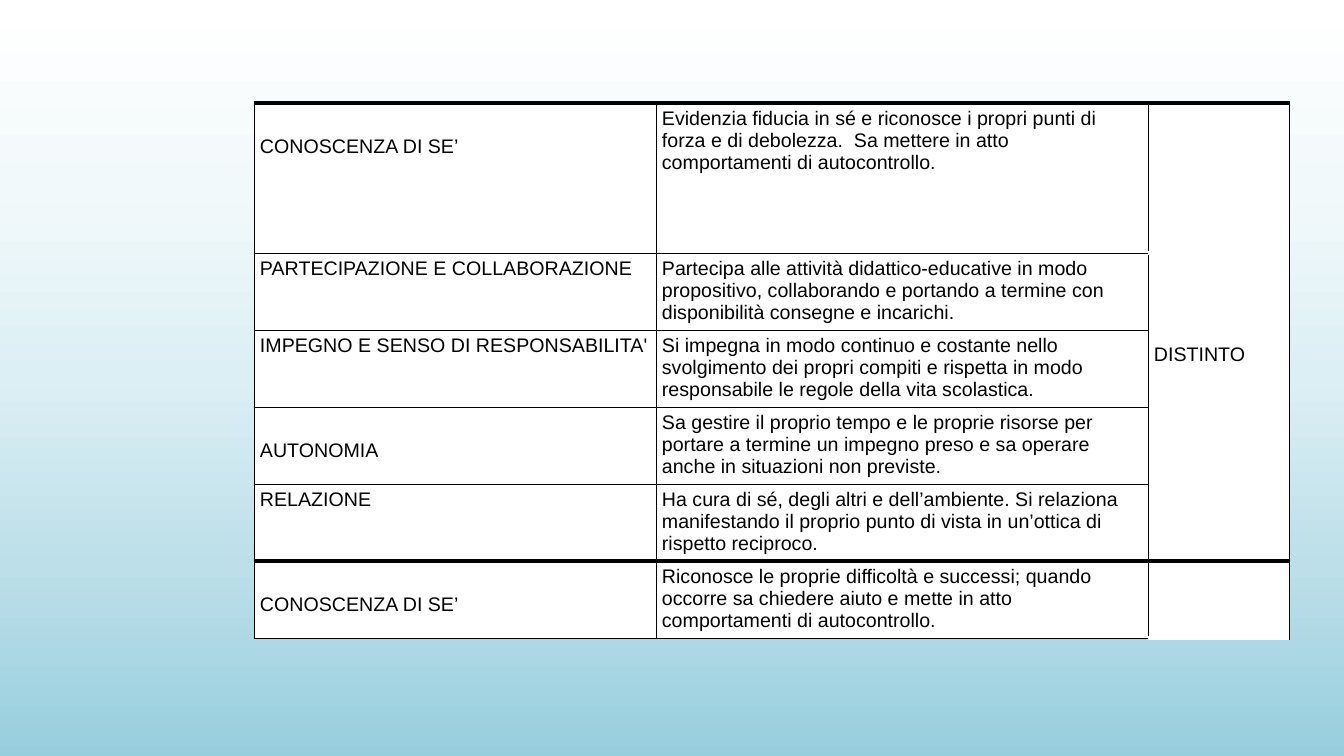
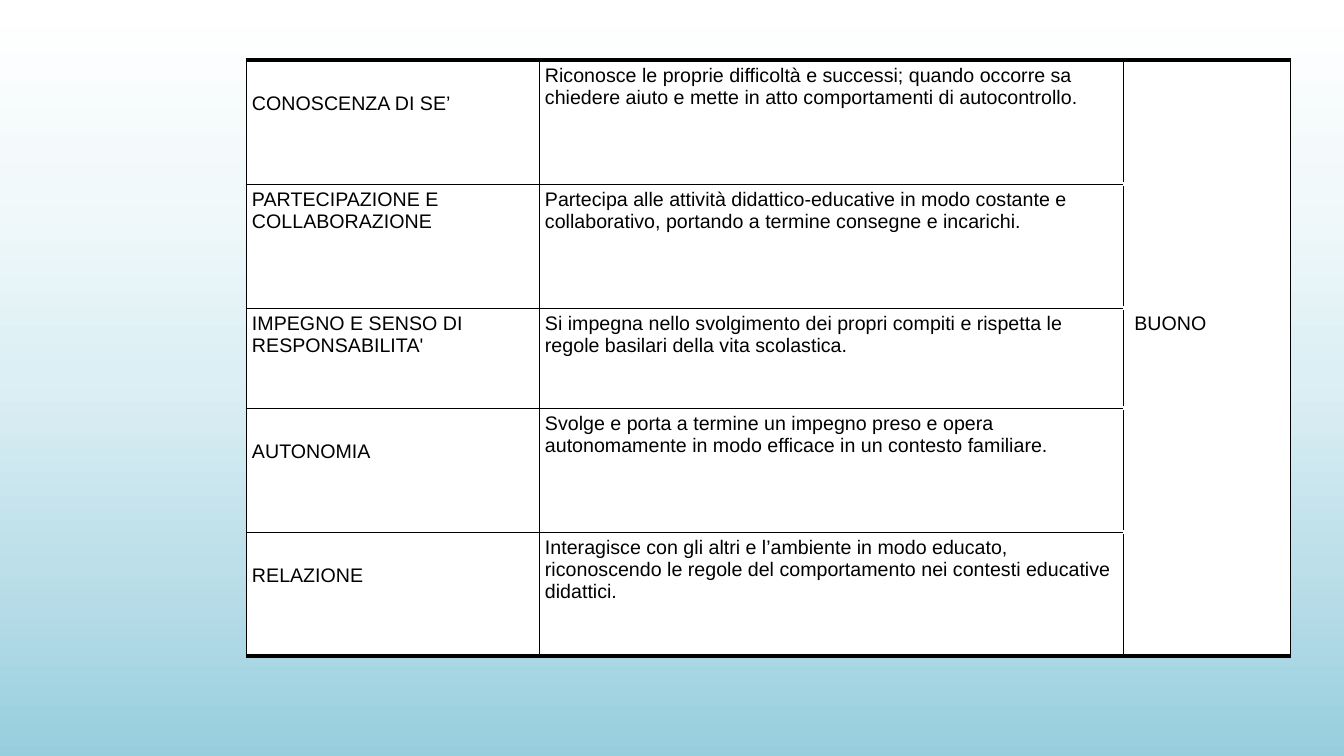
from pptx import Presentation
from pptx.dml.color import RGBColor
from pptx.oxml import parse_xml
from pptx.oxml.ns import nsdecls, qn
from pptx.util import Emu, Pt

SLIDE_W, SLIDE_H = 1344, 756
SCALE = 12192000 / SLIDE_W
COLORS = {
    "text": "000000",
    "rule": "000000",
    "hidden_rule": "FFFFFF",
    "cell": "FEFFFE",
}
BACKGROUND_STOPS = [
    (0, "97CEDE"),
    (25, "BCDFE9"),
    (50, "DCEFF4"),
    (75, "F2F9FB"),
    (100, "FFFFFF"),
]
FONT, FONT_SIZE = "Arial", 14
THIN, THICK = 0.5, 3
INSET_X, INSET_Y = 6, 5
LABEL_DROP, MERGED_DROP = 28, 86
RATING_COL = 2

RUBRICS = [
    {
        "left": 254, "top": 103,
        "cols": [402, 492, 141],
        "rows": [150, 77, 77, 77, 77, 77],
        "thick_edges": {0, 5},
        "rating": {"text": "DISTINTO", "row": 1, "span": 4, "drop": MERGED_DROP},
        "criteria": [
            ("CONOSCENZA DI SE’", LABEL_DROP,
             "Evidenzia fiducia in sé e riconosce i propri punti di forza e di debolezza.  Sa mettere in atto comportamenti di autocontrollo."),
            ("PARTECIPAZIONE E COLLABORAZIONE", 0,
             "Partecipa alle attività didattico-educative in modo propositivo, collaborando e portando a termine con disponibilità consegne e incarichi."),
            ("IMPEGNO E SENSO DI RESPONSABILITA'", 0,
             "Si impegna in modo continuo e costante nello svolgimento dei propri compiti e rispetta in modo responsabile le regole della vita scolastica."),
            ("AUTONOMIA", LABEL_DROP,
             "Sa gestire il proprio tempo e le proprie risorse per portare a termine un impegno preso e sa operare anche in situazioni non previste."),
            ("RELAZIONE", 0,
             "Ha cura di sé, degli altri e dell’ambiente. Si relaziona  manifestando il proprio punto di vista in un’ottica di rispetto reciproco."),
            ("CONOSCENZA DI SE’", LABEL_DROP,
             "Riconosce le proprie difficoltà e successi; quando occorre sa chiedere aiuto e mette in atto comportamenti di autocontrollo."),
        ],
    },
    {
        "left": 246, "top": 60,
        "cols": [293, 584, 167],
        "rows": [124, 124, 100, 124, 124],
        "thick_edges": {0, 5},
        "rating": {"text": " BUONO", "row": 2, "span": 1, "drop": 0},
        "criteria": [
            ("CONOSCENZA DI SE’", LABEL_DROP,
             "Riconosce le proprie difficoltà e successi; quando occorre sa chiedere aiuto e mette in atto comportamenti di autocontrollo."),
            ("PARTECIPAZIONE E COLLABORAZIONE", 0,
             "Partecipa alle attività didattico-educative in modo costante e collaborativo, portando a termine consegne e incarichi."),
            ("IMPEGNO E SENSO DI RESPONSABILITA'", 0,
             "Si impegna nello svolgimento dei propri compiti e rispetta le regole basilari della vita scolastica."),
            ("AUTONOMIA", LABEL_DROP,
             "Svolge e porta a termine un impegno preso e opera autonomamente in modo efficace in un contesto familiare."),
            ("RELAZIONE", LABEL_DROP,
             "Interagisce con gli altri e l’ambiente in modo educato, riconoscendo le regole del comportamento nei contesti educative didattici."),
        ],
    },
]


def px(length):
    return Emu(round(length * SCALE))


def paint_background(master):
    fill = master.background.fill
    fill.gradient()
    fill.gradient_angle = 90
    stops = master.element.find(".//" + qn("a:gsLst"))
    for stop in list(stops):
        stops.remove(stop)
    for percent, color in BACKGROUND_STOPS:
        stops.append(parse_xml(
            f'<a:gs {nsdecls("a")} pos="{percent * 1000}">'
            f'<a:srgbClr val="{color}"/></a:gs>'))


def write_cell(cell, text, drop):
    cell.margin_left = cell.margin_right = px(INSET_X)
    cell.margin_top = px(INSET_Y + drop)
    cell.margin_bottom = px(INSET_Y)
    cell.text_frame.text = text
    for run in cell.text_frame.paragraphs[0].runs:
        run.font.name = FONT
        run.font.size = Pt(FONT_SIZE)
        run.font.color.rgb = RGBColor.from_string(COLORS["text"])


def set_borders(cell, top, bottom):
    side = ("rule", THIN)
    properties = cell._tc.get_or_add_tcPr()
    for tag, (color, width) in zip(("lnL", "lnR", "lnT", "lnB"), (side, side, top, bottom)):
        properties.append(parse_xml(
            f'<a:{tag} {nsdecls("a")} w="{Pt(width)}"><a:solidFill>'
            f'<a:srgbClr val="{COLORS[color]}"/></a:solidFill></a:{tag}>'))


def edge_style(edge, col, thick_edges):
    if edge in thick_edges:
        return "rule", THICK
    return ("hidden_rule", THICK) if col == RATING_COL else ("rule", THIN)


def add_rubric(slide, rubric):
    cols, rows, rating = rubric["cols"], rubric["rows"], rubric["rating"]
    table = slide.shapes.add_table(
        len(rows), len(cols), px(rubric["left"]), px(rubric["top"]),
        px(sum(cols)), px(sum(rows))).table
    table.first_row = table.horz_banding = False
    for column, width in zip(table.columns, cols):
        column.width = px(width)
    for row, height in zip(table.rows, rows):
        row.height = px(height)
    first = rating["row"]
    if rating["span"] > 1:
        last = first + rating["span"] - 1
        table.cell(first, RATING_COL).merge(table.cell(last, RATING_COL))

    for i, (label, drop, descriptor) in enumerate(rubric["criteria"]):
        write_cell(table.cell(i, 0), label, drop)
        write_cell(table.cell(i, 1), descriptor, 0)
        for col in range(len(cols)):
            cell = table.cell(i, col)
            if not cell.is_spanned:
                span = cell.span_height if cell.is_merge_origin else 1
                set_borders(cell, *(edge_style(edge, col, rubric["thick_edges"])
                                    for edge in (i, i + span)))
            cell.fill.solid()
            cell.fill.fore_color.rgb = RGBColor.from_string(COLORS["cell"])
    write_cell(table.cell(first, RATING_COL), rating["text"], rating["drop"])


def main():
    prs = Presentation()
    prs.slide_width, prs.slide_height = px(SLIDE_W), px(SLIDE_H)
    paint_background(prs.slide_master)
    blank = prs.slide_layouts.get_by_name("Blank")
    for rubric in RUBRICS:
        add_rubric(prs.slides.add_slide(blank), rubric)
    prs.save("out.pptx")


if __name__ == "__main__":
    main()
